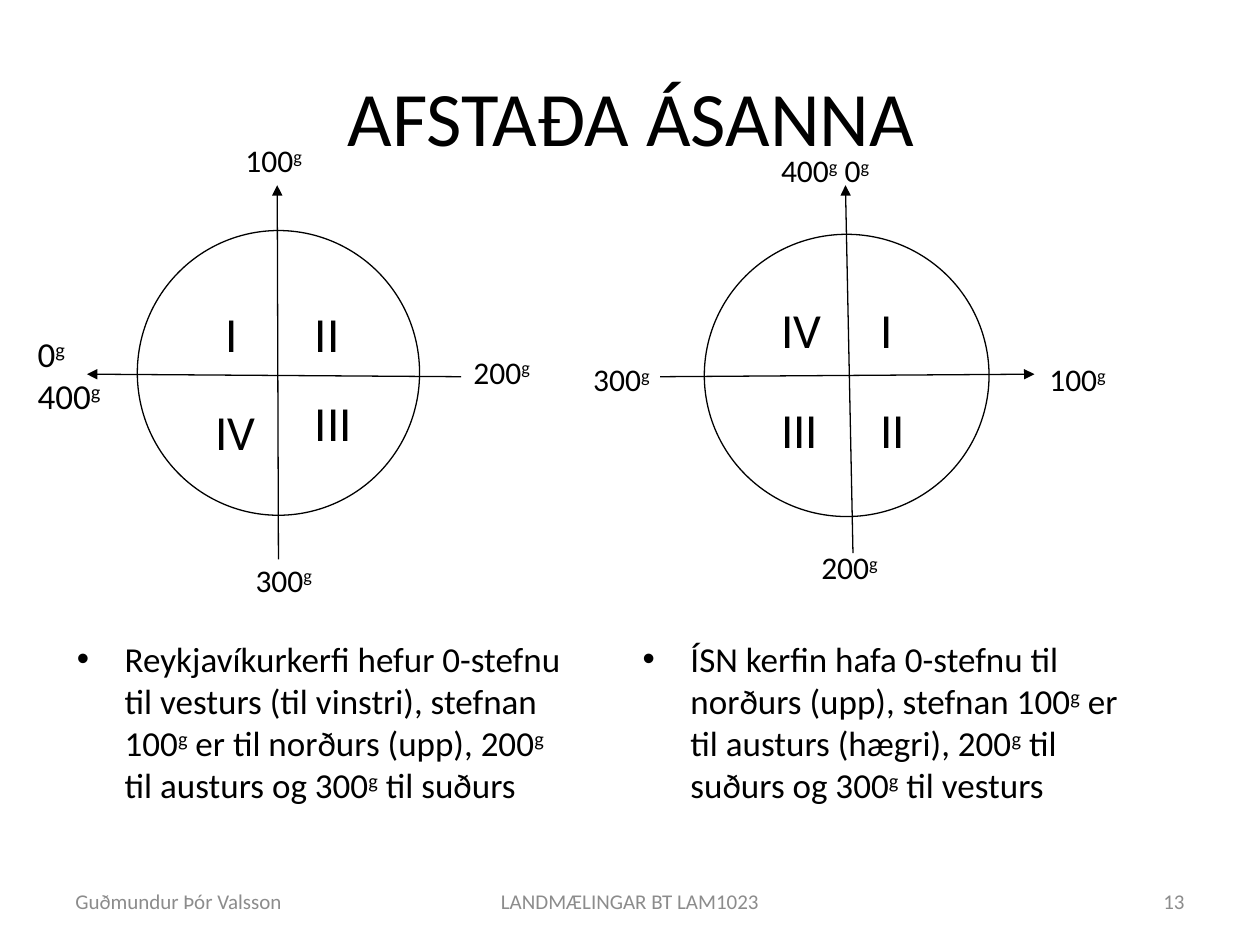
from dataclasses import dataclass
from lxml.etree import SubElement
from pptx import Presentation
from pptx.dml.color import RGBColor
from pptx.enum.shapes import MSO_CONNECTOR, MSO_SHAPE
from pptx.enum.text import MSO_ANCHOR, MSO_AUTO_SIZE, PP_ALIGN
from pptx.oxml.ns import qn
from pptx.util import Inches, Pt


@dataclass(frozen=True)
class Theme:
    face: str = "Calibri"
    ink: RGBColor = RGBColor(0, 0, 0)
    grey: RGBColor = RGBColor(0x8C, 0x8C, 0x8C)
    paper: RGBColor = RGBColor(255, 255, 255)
    title: int = 44
    mark: int = 28
    body: int = 20
    label: int = 18
    foot: int = 12
    line: float = 0.75


THEME = Theme()
WIDE, HIGH = Inches(10), Inches(7.5)
COLS, ROWS = 100, 75


def grid(col, row):
    return round(col * WIDE / COLS), round(row * HIGH / ROWS)


def place(shape, box):
    shape.left, shape.top = grid(*box[:2])
    shape.width, shape.height = grid(*box[2:])


def style(run, size, ink):
    run.font.name = THEME.face
    run.font.size = Pt(size)
    run.font.color.rgb = ink


def write(frame, text, size, ink=THEME.ink, align=PP_ALIGN.LEFT):
    frame.word_wrap = True
    for i, line in enumerate(text.split("\n")):
        para = frame.add_paragraph() if i else frame.paragraphs[0]
        para.alignment = align
        first, *rest = line.split("^")
        parts = [(first, False)]
        for part in rest:
            parts += [(part[0], True), (part[1:], False)]
        for part, raised in parts:
            if part:
                run = para.add_run()
                run.text = part
                style(run, size, ink)
                if raised:
                    run._r.get_or_add_rPr().set("baseline", "30000")


def label(shapes, box, text, size, ink=THEME.ink, align=PP_ALIGN.LEFT):
    frame = shapes.add_textbox(*grid(*box[:2]), *grid(*box[2:])).text_frame
    write(frame, text, size, ink, align)
    return frame


def arrow(shapes, start, end):
    line = shapes.add_connector(MSO_CONNECTOR.STRAIGHT, *grid(*start), *grid(*end))
    line.line.color.rgb = THEME.ink
    line.line.width = Pt(THEME.line)
    SubElement(line.line._get_or_add_ln(), qn("a:tailEnd"), type="triangle")
    SubElement(line._element.spPr, qn("a:effectLst"))


def dial(slide, box, axes, marks, ends):
    shapes = slide.shapes.add_group_shape().shapes
    left, top = box[:2]
    ring = shapes.add_shape(MSO_SHAPE.OVAL, *grid(*box[:2]), *grid(*box[2:]))
    ring.shadow.inherit = False
    ring.fill.solid()
    ring.fill.fore_color.rgb = THEME.paper
    ring.line.color.rgb = THEME.ink
    ring.line.width = Pt(THEME.line)
    for x1, y1, x2, y2 in axes:
        arrow(shapes, (left + x1, top + y1), (left + x2, top + y2))
    for text, x, y in marks:
        width = 3.1 if text == "I" else 5.5
        label(shapes, (left + x, top + y, width, 5.7), text, THEME.mark)
    for text, x, y, width, size in ends:
        height = 7.7 if "\n" in text else 4
        label(shapes, (left + x, top + y, width, height), text, size)


def heading(slide, box, text):
    title = slide.shapes.title
    place(title, box)
    title.text_frame.text = text
    title.text_frame.vertical_anchor = MSO_ANCHOR.MIDDLE
    para = title.text_frame.paragraphs[0]
    para.alignment = PP_ALIGN.CENTER
    style(para.runs[0], THEME.title, THEME.ink)


def points(holder, box, text):
    place(holder, box)
    frame = holder.text_frame
    write(frame, text, THEME.body)
    frame.auto_size = MSO_AUTO_SIZE.SHAPE_TO_FIT_TEXT
    para = frame.paragraphs[0]
    para.space_before = Pt(0)
    props = para._p.get_or_add_pPr()
    props.set("marL", str(Inches(0.38)))
    props.set("indent", str(-Inches(0.38)))
    SubElement(props, qn("a:buFont"), typeface="Arial")
    SubElement(props, qn("a:buChar"), char="•")


def footer(slide, box, items):
    left, top, width, height = box
    for text, x, share, align in items:
        area = (left + x * width, top, share * width, height)
        frame = label(slide.shapes, area, text, THEME.foot, THEME.grey, align)
        frame.vertical_anchor = MSO_ANCHOR.MIDDLE


def main():
    deck = Presentation()
    deck.slide_width, deck.slide_height = WIDE, HIGH
    slide = deck.slides.add_slide(deck.slide_layouts[3])
    heading(slide, (5.1, 2.9, 90, 12.5), "AFSTAÐA ÁSANNA")
    dial(
        slide, (10.9, 18.3, 22.4, 22.6),
        [(11.2, 26.1, 11.1, -3.6), (25.7, 11.6, -4, 11.4)],
        [("I", 6, 5.3), ("II", 13.1, 5.3), ("III", 13.1, 12.4), ("IV", 5.2, 13.1)],
        [("0^g\n400^g", -8.9, 7.6, 10.2, THEME.body),
         ("100^g", 7.6, -7.6, 8.7, THEME.label),
         ("200^g", 25.7, 9.2, 8.7, THEME.label),
         ("300^g", 8.4, 25.7, 8.7, THEME.label)],
    )
    dial(
        slide, (55.9, 18.6, 22.6, 22.4),
        [(-3.5, 11.3, 26.2, 11.1), (11.8, 25.3, 11.2, -3.9)],
        [("I", 13, 4.7), ("II", 13, 12.6), ("III", 5.1, 12.6), ("IV", 5.1, 4.7)],
        [("400^g 0^g", 5.1, -7.1, 11.8, THEME.label),
         ("100^g", 26.4, 9.5, 8.7, THEME.label),
         ("200^g", 8.3, 24.4, 8.7, THEME.label),
         ("300^g", -9.8, 9.5, 8.7, THEME.label)],
    )
    notes = (
        "Reykjavíkurkerfi hefur 0-stefnu til vesturs (til vinstri), stefnan 100^g"
        " er til norðurs (upp), 200^g til austurs og 300^g til suðurs",
        "ÍSN kerfin hafa 0-stefnu til norðurs (upp), stefnan 100^g"
        " er til austurs (hægri), 200^g til suðurs og 300^g til vesturs",
    )
    for i, text in enumerate(notes):
        points(slide.placeholders[i + 1], (5.1 + i * 44.9, 50.1, 40.9, 14.5), text)
    footer(slide, (5, 69.5, 90, 4), [
        ("Guðmundur Þór Valsson", 0, 0.26, PP_ALIGN.LEFT),
        ("LANDMÆLINGAR BT LAM1023", 0.32, 0.36, PP_ALIGN.CENTER),
        ("13", 0.74, 0.26, PP_ALIGN.RIGHT),
    ])
    deck.save("out.pptx")


if __name__ == "__main__":
    main()
